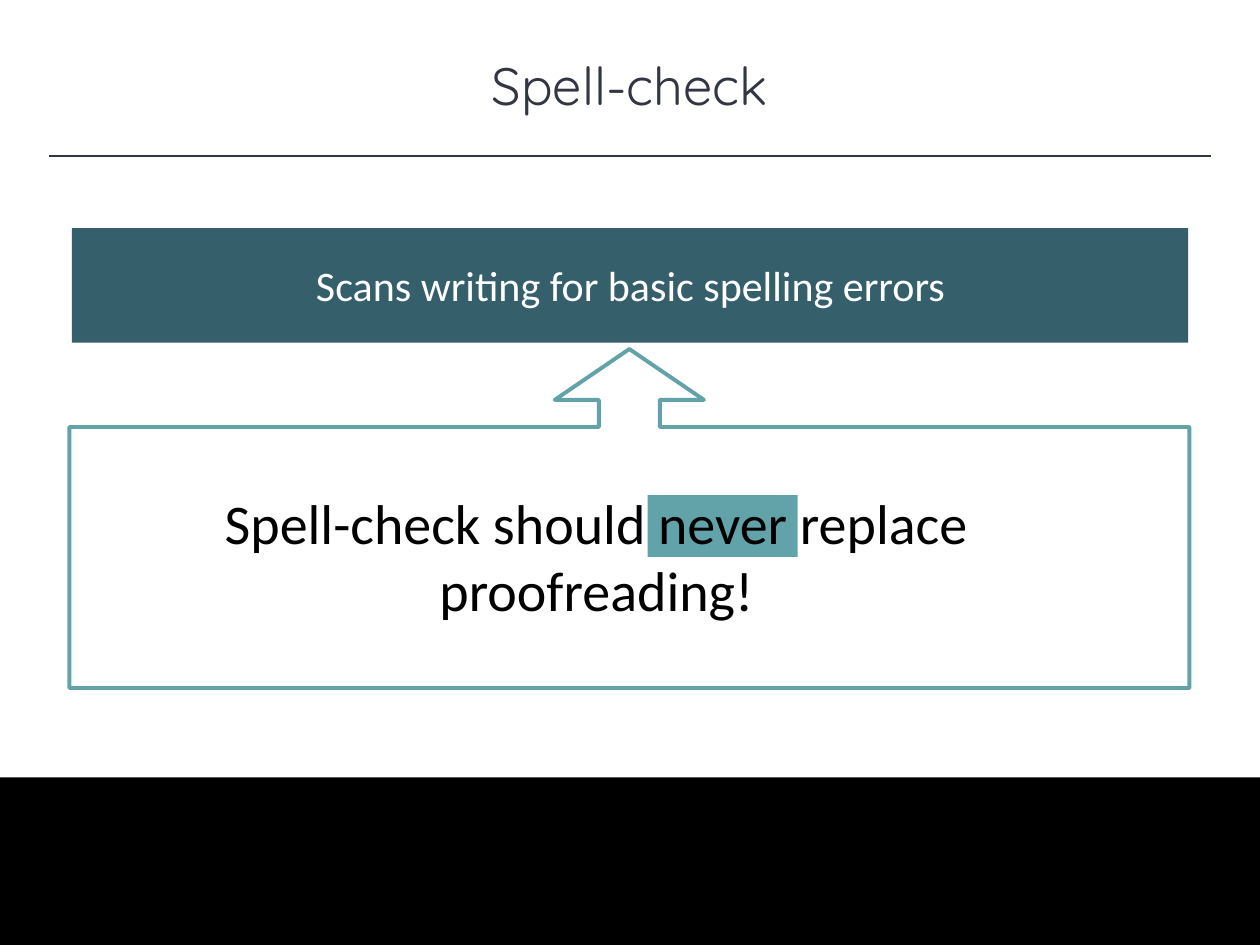
"""Build the slide that warns against relying on spell-check alone."""
from dataclasses import dataclass
from typing import Optional

from lxml import etree
from pptx import Presentation, util as u
from pptx.dml.color import RGBColor
from pptx.enum import shapes, text

COLUMNS, ROWS = 100, 75
WIDTH, HEIGHT = u.Inches(10), u.Inches(7.5)
COLORS = {"ink": "323542", "black": "000000", "white": "FFFFFF",
          "banner": "355F6B", "accent": "61A3A9"}


@dataclass(frozen=True)
class Area:
    """Place on the grid, in columns and rows."""
    column: float
    row: float
    columns: float
    rows: float

    def place(self) -> tuple[int, int, int, int]:
        """Return left, top, width and height as slide lengths."""
        return (across(self.column), down(self.row),
                across(self.columns), down(self.rows))


@dataclass(frozen=True)
class Panel:
    """Preset shape with a fill or an outline."""
    area: Area
    fill: Optional[str] = None
    outline: Optional[str] = None
    kind: shapes.MSO_SHAPE = shapes.MSO_SHAPE.RECTANGLE
    adjustments: tuple[float, ...] = ()


@dataclass(frozen=True)
class Caption:
    """Centred line of text."""
    area: Area
    words: str
    size: int
    color: str
    font: str = "Calibri"
    anchor: text.MSO_ANCHOR = text.MSO_ANCHOR.TOP


PANELS = (
    Panel(Area(0, 61.7, COLUMNS, 13.3), fill="black"),
    Panel(Area(5.7, 18.1, 88.6, 9.1), fill="banner"),
    Panel(Area(51.4, 39.3, 11.9, 4.9), fill="accent"),
    Panel(Area(5.5, 27.7, 88.9, 26.9), outline="accent",
          kind=shapes.MSO_SHAPE.UP_ARROW_CALLOUT,
          adjustments=(0.18, 0.22, 0.15, 0.77)),
)
CAPTIONS = (
    Caption(Area(0, 3.7, COLUMNS, 6.1), "Spell-check", 30, "ink", "Quicksand"),
    Caption(Area(17.9, 20.1, 64.3, 5),
            "Scans writing for basic spelling errors", 24, "white"),
    Caption(Area(12.5, 38.2, 69.7, 11.8),
            "Spell-check should never replace proofreading!", 32, "black",
            anchor=text.MSO_ANCHOR.MIDDLE),
)


def across(columns: float) -> int:
    """Turn columns into a slide length."""
    return round(WIDTH * columns / COLUMNS)


def down(rows: float) -> int:
    """Turn rows into a slide length."""
    return round(HEIGHT * rows / ROWS)


def color(name: str) -> RGBColor:
    """Look up a named colour."""
    return RGBColor.from_string(COLORS[name])


def draw_panel(page, panel: Panel) -> None:
    """Draw a filled or outlined shape."""
    box = page.shapes.add_shape(panel.kind, *panel.area.place())
    box.shadow.inherit = False
    for index, value in enumerate(panel.adjustments):
        box.adjustments[index] = value
    if panel.fill:
        box.fill.solid()
        box.fill.fore_color.rgb = color(panel.fill)
    else:
        box.fill.background()
    if panel.outline:
        box.line.color.rgb = color(panel.outline)
        box.line.width = u.Pt(2.25)
    else:
        box.line.fill.background()


def draw_caption(page, caption: Caption) -> None:
    """Draw a text box with one centred paragraph."""
    box = page.shapes.add_textbox(*caption.area.place())
    box.text_frame.word_wrap = True
    box.text_frame.vertical_anchor = caption.anchor
    para = box.text_frame.paragraphs[0]
    para.alignment = text.PP_ALIGN.CENTER
    span = para.add_run()
    span.text = caption.words
    span.font.name = caption.font
    span.font.size = u.Pt(caption.size)
    span.font.color.rgb = color(caption.color)


def draw_rule(page, margin: float, row: float) -> None:
    """Draw the thin rule below the title."""
    rule = page.shapes.add_connector(
        shapes.MSO_CONNECTOR.STRAIGHT, across(margin), down(row),
        across(COLUMNS - margin), down(row))
    rule.line.color.rgb = color("ink")
    rule.line.width = u.Pt(1)
    properties = rule.line._get_or_add_ln().getparent()
    namespace = etree.QName(properties[0]).namespace
    etree.SubElement(properties, f"{{{namespace}}}effectLst")


def main() -> None:
    """Compose and save the slide."""
    deck = Presentation()
    deck.slide_width, deck.slide_height = WIDTH, HEIGHT
    page = deck.slides.add_slide(deck.slide_layouts[6])
    page.background.fill.solid()
    page.background.fill.fore_color.rgb = color("white")
    draw_rule(page, margin=3.9, row=12.4)
    for panel in PANELS:
        draw_panel(page, panel)
    for caption in CAPTIONS:
        draw_caption(page, caption)
    deck.save("out.pptx")


if __name__ == "__main__":
    main()
